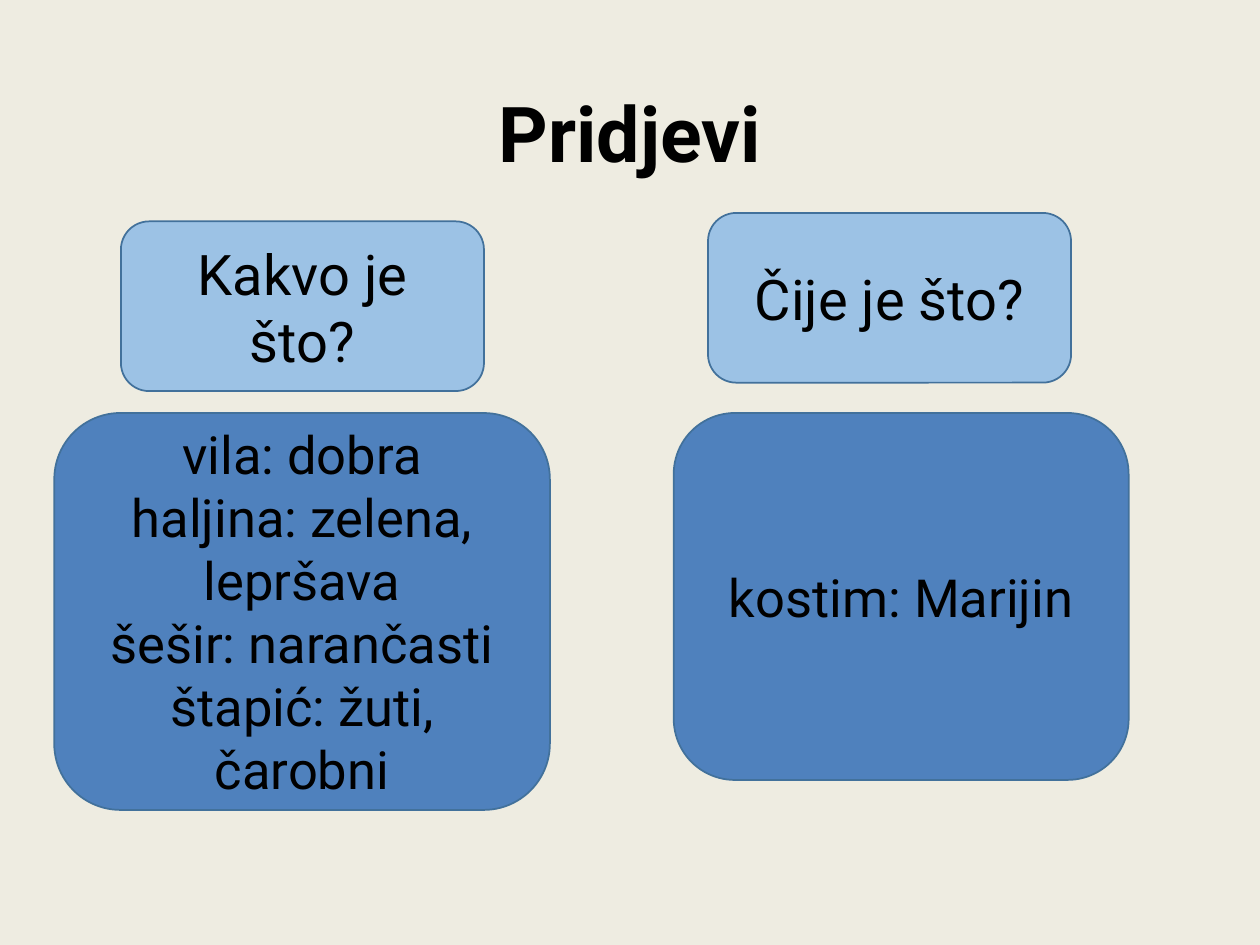
from pptx import Presentation
from pptx import util as u
from pptx.dml import color
from pptx.enum import shapes, text

FONT = "Roboto"
BLACK = "000000"
OUTLINE = "42719B"
QUESTION_FILL = "9CC2E5"
ANSWER_FILL = "4F81BD"


def paint(target, hex_colour):
    target.rgb = color.RGBColor.from_string(hex_colour)


def format_paragraph(paragraph, size, bold=False):
    paragraph.alignment = text.PP_ALIGN.CENTER
    for run in paragraph.runs:
        run.font.name = FONT
        run.font.size = u.Pt(size)
        run.font.bold = bold
        paint(run.font.color, BLACK)


def place_title(slide, box, wording):
    title = slide.shapes.title
    title.left, title.top, title.width, title.height = map(u.Pt, box)
    frame = title.text_frame
    frame.text = wording
    frame.word_wrap = True
    frame.vertical_anchor = text.MSO_ANCHOR.MIDDLE
    frame.paragraphs[0].line_spacing = 0.9
    format_paragraph(frame.paragraphs[0], 44, bold=True)


def add_card(slide, box, lines, fill, size):
    card = slide.shapes.add_shape(
        shapes.MSO_SHAPE.ROUNDED_RECTANGLE, *map(u.Pt, box))
    card.shadow.inherit = False
    card.fill.solid()
    paint(card.fill.fore_color, fill)
    paint(card.line.color, OUTLINE)
    card.line.width = u.Pt(1)
    frame = card.text_frame
    frame.word_wrap = True
    frame.vertical_anchor = text.MSO_ANCHOR.MIDDLE
    frame.text = "\n".join(lines)
    for paragraph in frame.paragraphs:
        format_paragraph(paragraph, size)


def add_column(slide, question_box, question, answer_box, answers):
    add_card(slide, question_box, [question], QUESTION_FILL, 32)
    add_card(slide, answer_box, answers, ANSWER_FILL, 30)


def main():
    presentation = Presentation()
    presentation.slide_width = u.Pt(720)
    presentation.slide_height = u.Pt(540)
    slide = presentation.slides.add_slide(presentation.slide_layouts[5])
    slide.background.fill.solid()
    paint(slide.background.fill.fore_color, "EEECE1")

    place_title(slide, (49, 36, 622, 85.7), "Pridjevi")
    add_column(
        slide,
        (69.1, 126.5, 207.5, 97), "Kakvo je što?",
        (31, 236, 283.2, 226.8),
        ["vila: dobra", "haljina: zelena, lepršava",
         "šešir: narančasti", "štapić: žuti, čarobni"])
    add_column(
        slide,
        (404.6, 121.7, 207.5, 97), "Čije je što?",
        (385, 236, 260, 209.7),
        ["kostim: Marijin"])

    presentation.save("out.pptx")


if __name__ == "__main__":
    main()
